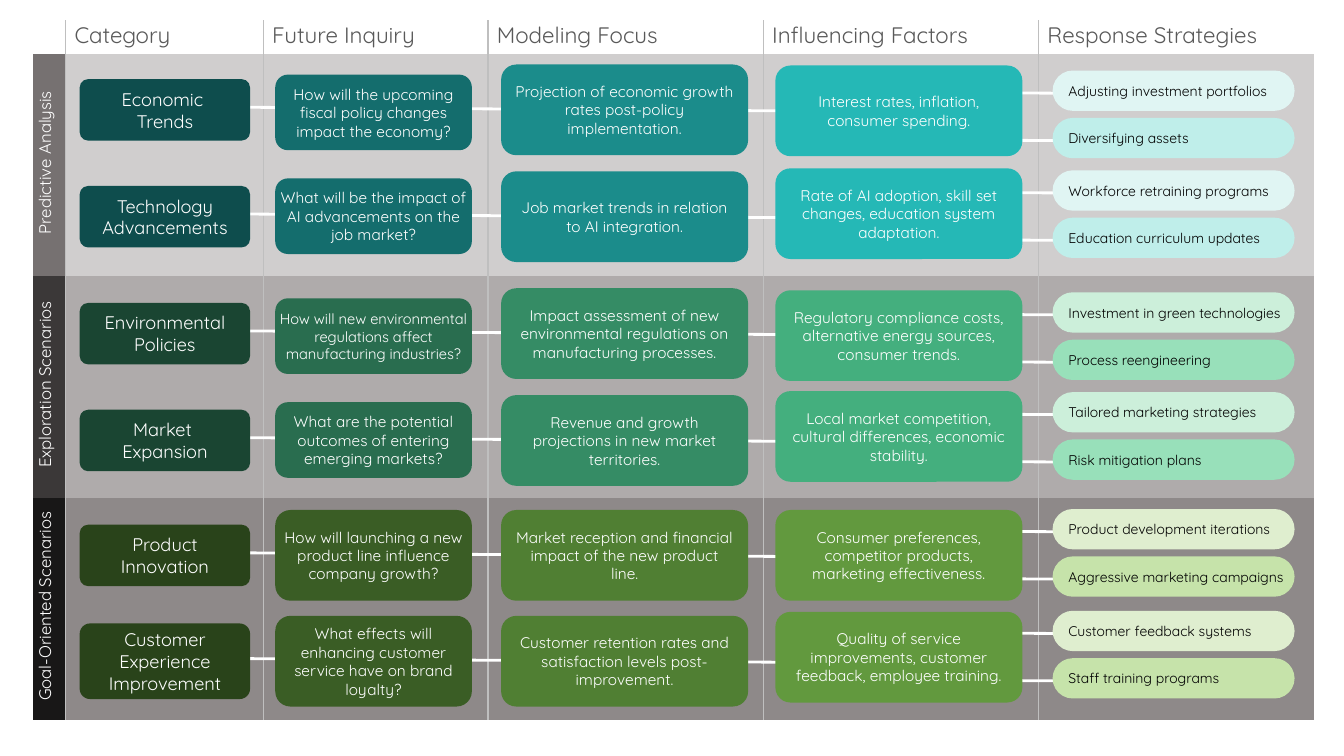
from lxml import etree
from pptx import Presentation
from pptx.dml.color import RGBColor
from pptx.enum import shapes, text
from pptx.oxml import ns, parse_xml
from pptx.util import Inches, Pt

FONT = "Quicksand"
WHITE = RGBColor(0xFF, 0xFF, 0xFF)
BLACK = RGBColor(0, 0, 0)
GREY = RGBColor(0x59, 0x59, 0x59)
RULE = RGBColor(0xBF, 0xBF, 0xBF)
PLAIN = "{2D5ABB26-0587-4C30-8999-92F81FD0307C}"
LEFT, MID = text.PP_ALIGN.LEFT, text.PP_ALIGN.CENTER

HEADS = ["Category", "Future Inquiry", "Modeling Focus",
         "Influencing Factors", "Response Strategies"]
COLS = [0.32, 1.96, 2.23, 2.73, 2.73, 2.73]
HEAD_H, BAND_H = 0.34, 2.2
# Name, side fill, band fill
BANDS = [
    ("Predictive Analysis", RGBColor(0x76, 0x71, 0x71), RGBColor(0xD0, 0xCE, 0xCE)),
    ("Exploration Scenarios", RGBColor(0x3B, 0x38, 0x38), RGBColor(0xAF, 0xAB, 0xAB)),
    ("Goal-Oriented Scenarios", RGBColor(0x18, 0x17, 0x17), RGBColor(0x8E, 0x89, 0x89)),
]
# Category, inquiry, focus, factors, first and second response
TEAL = [RGBColor(0x0E, 0x4D, 0x4D), RGBColor(0x14, 0x6D, 0x6D), RGBColor(0x1B, 0x8C, 0x8B),
        RGBColor(0x25, 0xB8, 0xB6), RGBColor(0xE0, 0xF5, 0xF3), RGBColor(0xBF, 0xEE, 0xEA)]
GREEN = [RGBColor(0x1A, 0x45, 0x32), RGBColor(0x29, 0x6D, 0x4F), RGBColor(0x35, 0x8C, 0x65),
         RGBColor(0x44, 0xAF, 0x7E), RGBColor(0xCC, 0xEF, 0xDA), RGBColor(0x98, 0xE0, 0xBA)]
OLIVE = [RGBColor(0x29, 0x43, 0x1A), RGBColor(0x3A, 0x5D, 0x25), RGBColor(0x50, 0x7F, 0x33),
         RGBColor(0x62, 0x99, 0x3E), RGBColor(0xDF, 0xEE, 0xCF), RGBColor(0xC6, 0xE3, 0xAA)]

# Top, colours, line start, shifts of inquiry, factors and responses,
# heights of category and inquiry, inquiry text size, wording
ROWS = [
    (0.64, TEAL, 1.84, (0.1, 0.01, 0.06), (0.61, 0.75), 11,
     ["Economic \nTrends",
      "How will the upcoming fiscal policy changes impact the economy?",
      "Projection of economic growth rates post-policy implementation.",
      "Interest rates, inflation, consumer spending.",
      "Adjusting investment portfolios", "Diversifying assets"]),
    (1.7, TEAL, 1.94, (0.07, -0.03, -0.01), (0.61, 0.75), 11,
     ["Technology Advancements",
      "What will be the impact of AI advancements on the job market?",
      "Job market trends in relation to AI integration.",
      "Rate of AI adoption, skill set changes, education system adaptation.",
      "Workforce retraining programs", "Education curriculum updates"]),
    (2.86, GREEN, 2.01, (0.1, 0.02, 0.04), (0.61, 0.75), 10.5,
     ["Environmental Policies",
      "How will new environmental regulations affect manufacturing industries?",
      "Impact assessment of new environmental regulations on manufacturing processes.",
      "Regulatory compliance costs, alternative energy sources, consumer trends.",
      "Investment in green technologies", "Process reengineering"]),
    (3.92, GREEN, 2.11, (0.07, -0.04, -0.03), (0.61, 0.75), 11,
     ["Market \nExpansion",
      "What are the potential outcomes of entering emerging markets?",
      "Revenue and growth projections in new market territories.",
      "Local market competition, cultural differences, economic stability.",
      "Tailored marketing strategies", "Risk mitigation plans"]),
    (5.06, OLIVE, 1.76, (0, 0, -0.01), (0.61, 0.9), 11,
     ["Product Innovation",
      "How will launching a new product line influence company growth?",
      "Market reception and financial impact of the new product line.",
      "Consumer preferences, competitor products, marketing effectiveness.",
      "Product development iterations", "Aggressive marketing campaigns"]),
    (6.11, OLIVE, 1.87, (0, -0.04, -0.05), (0.75, 0.9), 11,
     ["Customer Experience Improvement",
      "What effects will enhancing customer service have on brand loyalty?",
      "Customer retention rates and satisfaction levels post-improvement.",
      "Quality of service improvements, customer feedback, employee training.",
      "Customer feedback systems", "Staff training programs"]),
]


def write(frame, words, size=11, color=WHITE, align=MID):
    for i, line in enumerate(words.split("\n")):
        para = frame.add_paragraph() if i else frame.paragraphs[0]
        para.alignment = align
        run = para.add_run()
        run.text = line
        run.font.size, run.font.name = Pt(size), FONT
        run.font.color.rgb = color


def inset(part, left, top, right, bottom):
    part.margin_left, part.margin_top = Inches(left), Inches(top)
    part.margin_right, part.margin_bottom = Inches(right), Inches(bottom)


def edge(cell, sides):
    """Draw thin rules on the given sides, listed in schema order."""
    props = cell._tc.get_or_add_tcPr()
    for i, side in enumerate(sides):
        props.insert(i, parse_xml(
            f'<a:ln{side} {ns.nsdecls("a")} w="12700"><a:solidFill>'
            f'<a:srgbClr val="{RULE}"/></a:solidFill></a:ln{side}>'))


def grid(slide, left, top):
    high = HEAD_H + BAND_H * len(BANDS)
    table = slide.shapes.add_table(
        len(BANDS) + 1, len(COLS), Inches(left), Inches(top),
        Inches(sum(COLS)), Inches(high)).table
    table.first_row = table.horz_banding = False
    table._tbl.tblPr.find(ns.qn("a:tableStyleId")).text = PLAIN
    for col, wide in zip(table.columns, COLS):
        col.width = Inches(wide)
    for r, row in enumerate(table.rows):
        row.height = Inches(BAND_H if r else HEAD_H)
        for c, cell in enumerate(row.cells):
            inset(cell, 0.09 if c else 0.06, 0.01, 0.01, 0)
            if r:
                name, side, band = BANDS[r - 1]
                cell.fill.solid()
                cell.fill.fore_color.rgb = band if c else side
                if not c:
                    write(cell.text_frame, name, size=12)
                    cell._tc.get_or_add_tcPr().set("vert", "vert270")
            else:
                cell.fill.background()
                if c:
                    write(cell.text_frame, HEADS[c - 1], size=16, color=GREY, align=LEFT)
            edge(cell, "R" if not c else "L" if c == len(COLS) - 1 else "LR")


def link(slide, left, top, wide, drop):
    line = slide.shapes.add_connector(
        shapes.MSO_CONNECTOR.STRAIGHT, Inches(left), Inches(top),
        Inches(left + wide), Inches(top + drop))
    line.line.color.rgb, line.line.width = WHITE, Pt(2)
    etree.SubElement(line._element.spPr, ns.qn("a:effectLst"))


def card(slide, box, fill, words, pad, curve=None, **form):
    shape = slide.shapes.add_shape(
        shapes.MSO_SHAPE.ROUNDED_RECTANGLE, *[Inches(n) for n in box])
    shape.shadow.inherit = False
    shape.fill.solid()
    shape.fill.fore_color.rgb = fill
    shape.line.fill.background()
    if curve:
        shape.adjustments[0] = curve
    frame = shape.text_frame
    frame.word_wrap = True
    frame.vertical_anchor = text.MSO_ANCHOR.MIDDLE
    inset(frame, *pad)
    write(frame, words, **form)


def chain(slide, top, hues, start, shifts, highs, size, words):
    """Place one row of cards, with its lines behind them."""
    ask, factor, reply = [top + n for n in shifts]
    tall, step = 0.9, 0.47
    link(slide, start, top + 0.42, 7.39, 0.05)
    for i in range(2):
        link(slide, start + 7.82, reply + 0.22 + i * step, 1.73, 0.01)
    cat = top + (tall - highs[0]) / 2
    card(slide, (0.79, cat, 1.69, highs[0]), hues[0], words[0],
         (0.05, 0.02, 0.05, 0.02), curve=0.137, size=13)
    card(slide, (2.73, ask, 1.95, highs[1]), hues[1], words[1],
         (0, 0.02, 0, 0.02), size=size)
    card(slide, (4.97, top, 2.45, tall), hues[2], words[2], (0.1, 0.02, 0.1, 0.02))
    card(slide, (7.69, factor, 2.45, tall), hues[3], words[3], (0.1, 0, 0.1, 0))
    for i in range(2):
        card(slide, (10.44, reply + i * step, 2.4, 0.4), hues[4 + i], words[4 + i],
             (0.1, 0.02, 0.02, 0.02), curve=0.5, size=10, color=BLACK, align=LEFT)


def main():
    deck = Presentation()
    deck.slide_width, deck.slide_height = Inches(13.33), Inches(7.5)
    slide = deck.slides.add_slide(deck.slide_layouts[6])
    grid(slide, 0.33, 0.2)
    for row in ROWS:
        chain(slide, *row)
    deck.save("out.pptx")


if __name__ == "__main__":
    main()
